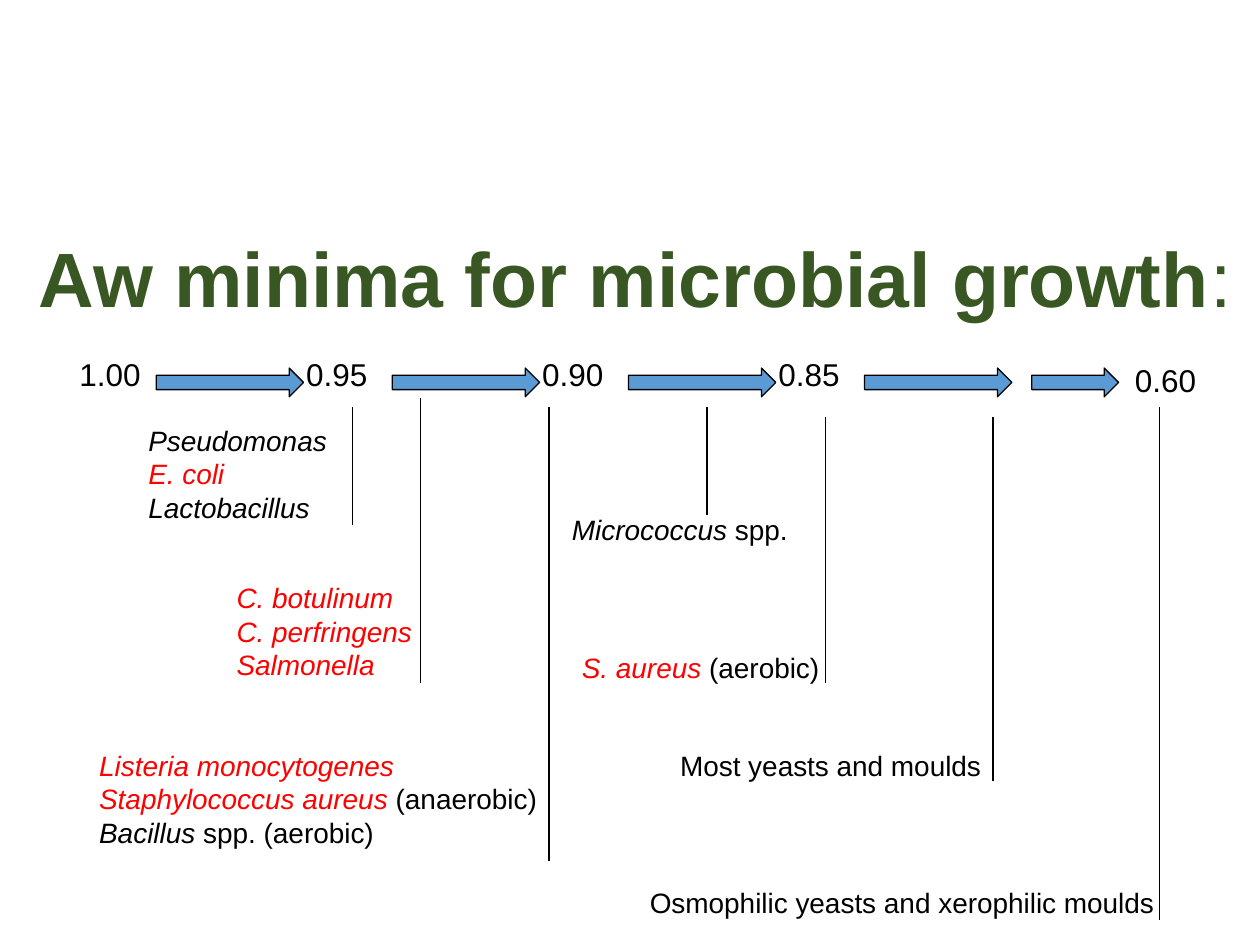
from lxml import etree
from pptx import Presentation
from pptx.dml.color import RGBColor
from pptx.enum.shapes import MSO_CONNECTOR, MSO_SHAPE
from pptx.enum.text import MSO_ANCHOR, PP_ALIGN
from pptx.oxml.ns import qn
from pptx.util import Cm, Pt

ARROW = MSO_SHAPE.RIGHT_ARROW
LINE = MSO_CONNECTOR.STRAIGHT
LEFT = PP_ALIGN.LEFT
BOTTOM = MSO_ANCHOR.BOTTOM

COLORS = {"title": "385723", "text": "000000", "risk": "FF0000", "arrow": "5B9BD5"}
FACE = "Arial"

RISK = ("risk", True)
NAME = ("text", True)
PLAIN = ("text", False)

DROPS = [
    ((5.76, 0.18, 2.56), (1.39, 0.38, 4.37),
     [[("Pseudomonas", NAME)], [("E. coli", RISK)], [("Lactobacillus", NAME)]]),
    ((7.13, 0, 5.74), (3.17, 3.55, 4.78),
     [[("C. botulinum", RISK)], [("C. perfringens", RISK)], [("Salmonella", RISK)]]),
    ((9.72, 0.18, 9.32), (0.4, 6.93, 9.53),
     [[("Listeria monocytogenes", RISK)],
      [("Staphylococcus aureus ", RISK), ("(anaerobic)", PLAIN)],
      [("Bacillus ", NAME), ("spp. (aerobic)", PLAIN)]]),
    ((12.9, 0.18, 2.36), (9.93, 2.18, 4.95),
     [[("Micrococcus", NAME), (" spp.", PLAIN)]]),
    ((15.29, 0.38, 5.74), (10.13, 4.95, 5.36),
     [[("S. aureus ", RISK), ("(aerobic)", PLAIN)]]),
    ((18.67, 0.38, 7.72), (12.11, 6.93, 7.14),
     [[("Most yeasts and moulds", PLAIN)]]),
    ((22.02, 0.18, 10.51), (11.5, 9.7, 10.72),
     [[("Osmophilic yeasts and xerophilic moulds", PLAIN)]]),
]


def color(key):
    """Return the named colour."""
    return RGBColor.from_string(COLORS[key])


def style(font, look):
    """Apply a colour and slant to a font."""
    font.color.rgb = color(look[0])
    font.italic = look[1]


def add_text(slide, box, rows, size):
    """Write rows of styled runs in a text box."""
    frame = slide.shapes.add_textbox(*map(Cm, box)).text_frame
    frame.word_wrap = True
    for i, row in enumerate(rows):
        para = frame.add_paragraph() if i else frame.paragraphs[0]
        para.font.name = FACE
        para.font.size = Pt(size)
        if len(row) == 1:
            style(para.font, row[0][1])
        for text, look in row:
            run = para.add_run()
            run.text = text
            if len(row) > 1:
                style(run.font, look)


def add_arrow(slide, box):
    """Draw one block arrow of the scale."""
    arrow = slide.shapes.add_shape(ARROW, *map(Cm, box))
    arrow.shadow.inherit = False
    arrow.fill.solid()
    arrow.fill.fore_color.rgb = color("arrow")
    arrow.line.color.rgb = color("text")
    arrow.line.width = Pt(0.75)


def add_line(slide, x, top, end):
    """Draw a thin upright line."""
    line = slide.shapes.add_connector(LINE, Cm(x), Cm(top), Cm(x), Cm(end))
    line.line.color.rgb = color("text")
    line.line.width = Pt(0.75)
    etree.SubElement(line._element.spPr, qn("a:effectLst"))


def add_title(slide, box):
    """Place and format the title."""
    title = slide.shapes.title
    title.left, title.top, title.width, title.height = map(Cm, box)
    frame = title.text_frame
    frame.word_wrap = True
    frame.vertical_anchor = BOTTOM
    para = frame.paragraphs[0]
    para.alignment = LEFT
    para.font.name = FACE
    para.font.size = Pt(44)
    para.font.color.rgb = color("title")
    for text, bold in (("Aw minima for microbial growth", True), (":", False)):
        run = para.add_run()
        run.text = text
        run.font.bold = bold


def add_scale(slide, box):
    """Lay out the water activity values and the arrows between them."""
    left, top, width, height = box
    step = 4.76
    marks = [("1.00", 0, 0)]
    marks += [(t, 4.57 + step * i, 0) for i, t in enumerate(("0.95", "0.90", "0.85"))]
    marks.append(("0.60", width - 2.5, 0.12))
    for text, x, y in marks:
        add_text(slide, (left + x, top + y, 2.5, height), [[(text, PLAIN)]], 18)
    spans = [(1.8 + step * i, 2.97) for i in range(4)] + [(19.45, 1.75)]
    for x, wide in spans:
        add_arrow(slide, (left + x, top + 0.38, wide, 0.58))


def add_drops(slide, box):
    """Hang the microbes on lines below the scale."""
    left, top = box
    for (x, start, end), (tx, ty, wide), rows in DROPS:
        add_line(slide, left + x, top + start, top + end)
        area = (left + tx, top + ty, wide, 0.26 + 0.68 * len(rows))
        add_text(slide, area, rows, 16)


def main():
    """Build and save the slide."""
    deck = Presentation()
    deck.slide_width, deck.slide_height = Cm(25.4), Cm(19.05)
    slide = deck.slides.add_slide(deck.slide_layouts[5])
    add_title(slide, (0.53, 4.5, 24.6, 2.13))
    add_scale(slide, (1.35, 7.04, 23.78, 1.02))
    add_drops(slide, (1.35, 8.03))
    deck.save("out.pptx")


if __name__ == "__main__":
    main()
